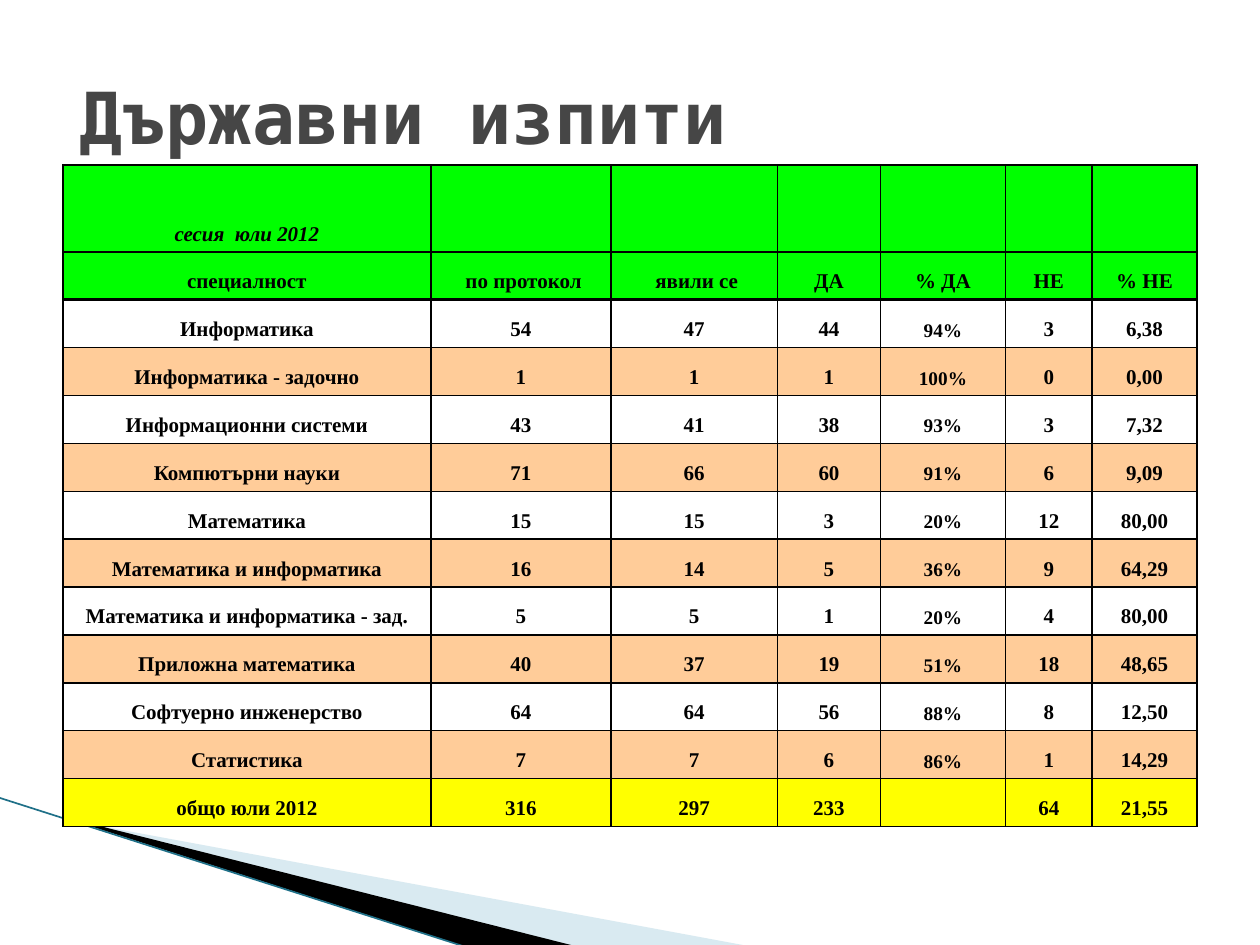
from lxml import etree
from pptx import Presentation, util as u
from pptx.dml.color import RGBColor
from pptx.enum import shapes, text
from pptx.oxml import ns

COLUMN_WIDTHS = [2.92, 1.43, 1.32, 0.82, 0.99, 0.69, 0.83]
SESSION_HEIGHT, ROW_HEIGHT = 0.69, 0.38
PERCENT_COLUMN = 4
GREEN, PEACH, YELLOW, WHITE, BLACK = "00FF00", "FFCC99", "FFFF00", "FFFFFF", "000000"

ROWS = [
    ["сесия  юли 2012", "", "", "", "", "", ""],
    ["специалност", " по протокол", " явили се", "ДА", "% ДА", "НЕ", "% НЕ"],
    ["Информатика", "54", "47", "44", "94%", "3", "6,38"],
    ["Информатика - задочно", "1", "1", "1", "100%", "0", "0,00"],
    ["Информационни системи", "43", "41", "38", "93%", "3", "7,32"],
    ["Компютърни науки", "71", "66", "60", "91%", "6", "9,09"],
    ["Математика", "15", "15", "3", "20%", "12", "80,00"],
    ["Математика и информатика", "16", "14", "5", "36%", "9", "64,29"],
    ["Математика и информатика - зад.", "5", "5", "1", "20%", "4", "80,00"],
    ["Приложна математика", "40", "37", "19", "51%", "18", "48,65"],
    ["Софтуерно инженерство", "64", "64", "56", "88%", "8", "12,50"],
    ["Статистика", "7", "7", "6", "86%", "1", "14,29"],
    ["общо юли 2012", "316", "297", "233", "", "64", "21,55"],
]


def color(value):
    return RGBColor.from_string(value)


def set_font(font, **values):
    font.color.rgb = color(values.pop("color"))
    for name, value in values.items():
        setattr(font, name, value)


def add_wedge(page, left, top, points, fill, opacity=100):
    """Draw a filled outline; points are offsets in inches from left, top."""
    corners = [(u.Inches(left + x), u.Inches(top + y)) for x, y in points]
    builder = page.shapes.build_freeform(*corners[0], scale=1.0)
    builder.add_line_segments(corners[1:], close=True)
    wedge = builder.convert_to_shape()
    wedge.shadow.inherit = False
    wedge.fill.solid()
    wedge.fill.fore_color.rgb = color(fill)
    wedge.line.fill.background()
    if opacity < 100:
        shade = wedge._element.spPr.find(".//" + ns.qn("a:srgbClr"))
        etree.SubElement(shade, ns.qn("a:alpha"), val=str(opacity * 1000))


def add_corner_decoration(page, left, top):
    add_wedge(page, left + 0.56, top + 0.17,
              [(0, 0.01), (5.4, 1.01), (4.01, 1.01), (0, 0)], "A0CBDC", 40)
    add_wedge(page, left + 0.54, top + 0.16,
              [(0, 0), (4.04, 1.02), (3.19, 1.03), (0.01, 0.01)], BLACK)
    edge = page.shapes.add_connector(
        shapes.MSO_CONNECTOR.STRAIGHT, u.Inches(left), u.Inches(top),
        u.Inches(left + 3.72), u.Inches(top + 1.19))
    edge.line.color.rgb = color("1F7088")
    edge.line.width = u.Pt(0.95)
    etree.SubElement(edge._element.spPr, ns.qn("a:effectLst"))


def format_title(page, left, top, width, height):
    title = page.shapes.title
    box = dict(left=left, top=top, width=width, height=height)
    for name, value in box.items():
        setattr(title, name, u.Inches(value))
    title.text_frame.vertical_anchor = text.MSO_ANCHOR.MIDDLE
    para = title.text_frame.paragraphs[0]
    para.alignment = text.PP_ALIGN.LEFT
    span = para.add_run()
    span.text = "Държавни изпити"
    set_font(span.font, name="DejaVu Sans Mono", size=u.Pt(41), bold=True, color="464646")


def set_borders(cell, **widths):
    """Give each named side (L, R, T, B) a black line of that many points."""
    properties = cell._tc.get_or_add_tcPr()
    for index, (side, width) in enumerate(widths.items()):
        line = etree.Element(ns.qn("a:ln" + side), w=str(u.Pt(width)))
        fill = etree.SubElement(line, ns.qn("a:solidFill"))
        etree.SubElement(fill, ns.qn("a:srgbClr"), val=BLACK)
        properties.insert(index, line)


def row_fill(row):
    if row < 2:
        return GREEN
    if row == len(ROWS) - 1:
        return YELLOW
    return PEACH if row % 2 else WHITE


def fill_cell(cell, row, column):
    cell.fill.solid()
    cell.fill.fore_color.rgb = color(row_fill(row))
    cell.vertical_anchor = text.MSO_ANCHOR.BOTTOM
    cell.margin_top = 0
    set_borders(cell, L=1, R=1, T=2 if row == 2 else 1, B=2 if row == 1 else 1)
    if not ROWS[row][column]:
        return
    para = cell.text_frame.paragraphs[0]
    para.alignment = text.PP_ALIGN.CENTER
    span = para.add_run()
    span.text = ROWS[row][column]
    size = 11 if column == PERCENT_COLUMN and row > 1 else 12
    set_font(span.font, name="Times New Roman", size=u.Pt(size), bold=True,
             italic=row == 0, color=BLACK)


def add_results_table(page, left, top):
    heights = [SESSION_HEIGHT] + [ROW_HEIGHT] * (len(ROWS) - 1)
    table = page.shapes.add_table(
        len(ROWS), len(COLUMN_WIDTHS), u.Inches(left), u.Inches(top),
        u.Inches(sum(COLUMN_WIDTHS)), u.Inches(sum(heights))).table
    for column, width in zip(table.columns, COLUMN_WIDTHS):
        column.width = u.Inches(width)
    for row, height in enumerate(heights):
        table.rows[row].height = u.Inches(height)
        for column in range(len(COLUMN_WIDTHS)):
            fill_cell(table.cell(row, column), row, column)


def main():
    deck = Presentation()
    deck.slide_width, deck.slide_height = u.Inches(10), u.Inches(7.5)
    page = deck.slides.add_slide(deck.slide_layouts.get_by_name("Title Only"))
    add_corner_decoration(page, -0.01, 6.33)
    format_title(page, 0.53, 0.29, 9, 1.25)
    add_results_table(page, 0.5, 1.31)
    deck.save("out.pptx")


if __name__ == "__main__":
    main()
